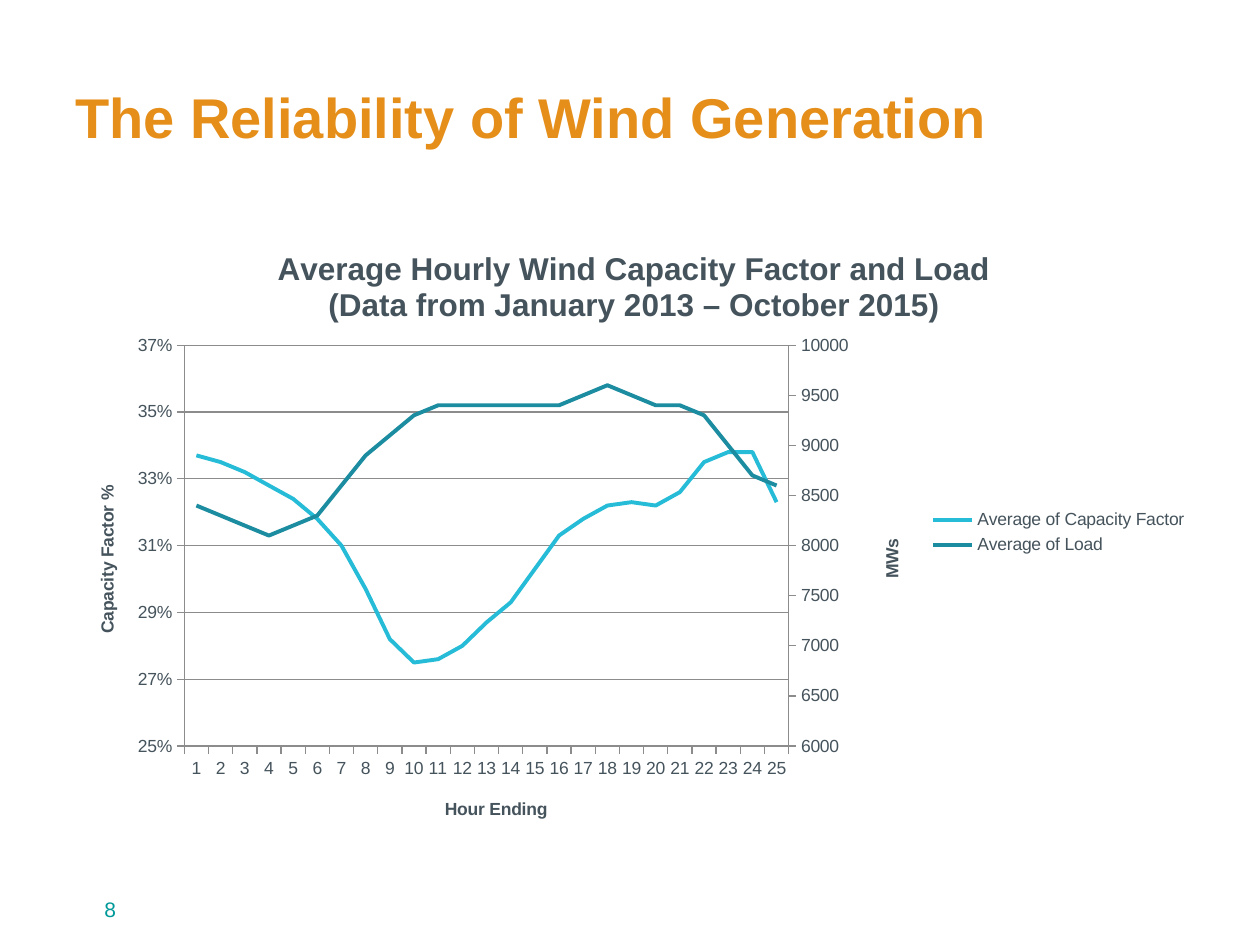
from copy import deepcopy

from lxml import etree
from pptx import Presentation
from pptx import util as u
from pptx.chart.axis import ValueAxis
from pptx.chart.data import CategoryChartData
from pptx.dml.color import RGBColor
from pptx.enum import chart as charts, text
from pptx.oxml.ns import qn

HEADING = "The Reliability of Wind Generation"
PAGE_NUMBER = "8"
CHART_TITLE = "Average Hourly Wind Capacity Factor and Load\n(Data from January 2013 – October 2015)"
HOURS = [str(hour) for hour in range(1, 26)]
CAPACITY = [0.337, 0.335, 0.332, 0.328, 0.324, 0.318, 0.31, 0.297, 0.282, 0.275, 0.276, 0.28, 0.287,
            0.293, 0.303, 0.313, 0.318, 0.322, 0.323, 0.322, 0.326, 0.335, 0.338, 0.338, 0.323]
LOAD = [8400, 8300, 8200, 8100, 8200, 8300, 8600, 8900, 9100, 9300, 9400, 9400, 9400,
        9400, 9400, 9400, 9500, 9600, 9500, 9400, 9400, 9300, 9000, 8700, 8600]
SERIES = [("Average of Capacity Factor", CAPACITY, "26BCD7"), ("Average of Load", LOAD, "1C8CA1")]
THEME = {
    "font": "Arial", "heading": "E58E1A", "number": "009999", "ink": "45535C", "rule": "8C8C8C",
    "heading_size": 32, "number_size": 12, "title_size": 18, "label_size": 10,
}
LAYOUTS = {
    "plot": {"x": 0.107, "y": 0.2, "w": 0.533, "h": 0.643},
    "title": {"x": 0.186, "y": 0.04},
    "hours": {"x": 0.334, "y": 0.92},
    "capacity": {"x": 0.026, "y": 0.42},
    "load": {"x": 0.718, "y": 0.505},
    "legend": {"x": 0.76, "y": 0.455, "w": 0.236, "h": 0.09},
}


def style_font(font, size, color, bold=False):
    for name, value in {"name": THEME["font"], "size": u.Pt(size), "bold": bold}.items():
        setattr(font, name, value)
    font.color.rgb = RGBColor.from_string(color)


def add_label(page, frame, words, size, color, bold, anchor):
    box = page.shapes.add_textbox(*map(u.Pt, frame))
    box.text_frame.word_wrap = True
    box.text_frame.vertical_anchor = anchor
    span = box.text_frame.paragraphs[0].add_run()
    span.text = words
    style_font(span.font, size, color, bold)


def place(parent, after, layout, inner=False):
    for old in parent.findall(qn("c:layout")):
        parent.remove(old)
    holder = etree.Element(qn("c:layout"))
    manual = etree.SubElement(holder, qn("c:manualLayout"))
    values = {"layoutTarget": "inner"} if inner else {}
    values |= {"xMode": "edge", "yMode": "edge"} | layout
    for name, value in values.items():
        etree.SubElement(manual, qn("c:" + name)).set("val", str(value))
    if after is None:
        parent.insert(0, holder)
    else:
        after.addnext(holder)


def write_title(title, words, size):
    title.text_frame.text = words
    for para in title.text_frame.paragraphs:
        for span in para.runs:
            style_font(span.font, size, THEME["ink"], True)


def style_line(line, color, width):
    line.color.rgb = RGBColor.from_string(color)
    line.width = u.Pt(width)


def style_axis(axis, title):
    axis.major_tick_mark = charts.XL_TICK_MARK.OUTSIDE
    axis.minor_tick_mark = charts.XL_TICK_MARK.NONE
    style_line(axis.format.line, THEME["rule"], 0.75)
    style_font(axis.tick_labels.font, THEME["label_size"], THEME["ink"])
    write_title(axis.axis_title, title, THEME["label_size"])


def scale_axis(axis, low, high, step, number_format):
    axis.minimum_scale, axis.maximum_scale, axis.major_unit = low, high, step
    axis.tick_labels.number_format = number_format
    axis.tick_labels.number_format_is_linked = False


def add_load_axis(chart):
    plot_area = chart.element.xpath(".//c:plotArea")[0]
    first = plot_area.find(qn("c:lineChart"))
    second = deepcopy(first)
    first.remove(first.findall(qn("c:ser"))[1])
    second.remove(second.find(qn("c:ser")))
    first.addnext(second)
    hours = plot_area.find(qn("c:catAx"))
    capacity = plot_area.find(qn("c:valAx"))
    hidden, load = deepcopy(hours), deepcopy(capacity)
    capacity.addnext(load)
    load.addnext(hidden)
    for axis, own, other in ((hidden, "5001", "5002"), (load, "5002", "5001")):
        axis.find(qn("c:axId")).set("val", own)
        axis.find(qn("c:crossAx")).set("val", other)
    for link, number in zip(second.findall(qn("c:axId")), ("5001", "5002")):
        link.set("val", number)
    load.find(qn("c:axPos")).set("val", "r")
    load.find(qn("c:crosses")).set("val", "max")
    axis = ValueAxis(load)
    axis.has_major_gridlines = False
    hidden_axis = hidden.find(qn("c:delete"))
    hidden_axis.set("val", "1")
    return axis


def add_line_chart(page):
    data = CategoryChartData()
    data.categories = HOURS
    for name, values, _ in SERIES:
        data.add_series(name, values)
    frame = map(u.Pt, (36, 126, 648, 356.4))
    chart = page.shapes.add_chart(charts.XL_CHART_TYPE.LINE, *frame, data).chart
    style_font(chart.font, THEME["label_size"], THEME["ink"])
    chart.has_title = True
    write_title(chart.chart_title, CHART_TITLE, THEME["title_size"])
    chart.chart_title.include_in_layout = False
    chart.has_legend = True
    chart.legend.position = charts.XL_LEGEND_POSITION.RIGHT
    chart.legend.include_in_layout = False
    style_font(chart.legend.font, THEME["label_size"], THEME["ink"])
    for series, (_, _, color) in zip(chart.plots[0].series, SERIES):
        series.smooth = False
        style_line(series.format.line, color, 2.25)
    chart.plots[0].vary_by_categories = False

    capacity = chart.value_axis
    capacity.has_major_gridlines = True
    style_line(capacity.major_gridlines.format.line, THEME["rule"], 0.75)
    load = add_load_axis(chart)
    scale_axis(capacity, 0.25, 0.37, 0.02, "0%")
    scale_axis(load, 6000, 10000, 500, "0")
    for axis, title in ((chart.category_axis, "Hour Ending"), (capacity, "Capacity Factor %"), (load, "MWs")):
        style_axis(axis, title)

    root = chart.element
    titles = {"title": "c:chart", "hours": "c:catAx[1]", "capacity": "c:valAx[1]", "load": "c:valAx[2]"}
    for name, owner in titles.items():
        title = root.xpath(f".//{owner}/c:title")[0]
        place(title, title.find(qn("c:tx")), LAYOUTS[name])
    legend = root.xpath(".//c:legend")[0]
    place(legend, legend.find(qn("c:legendPos")), LAYOUTS["legend"])
    place(root.xpath(".//c:plotArea")[0], None, LAYOUTS["plot"], inner=True)


def main():
    deck = Presentation()
    deck.slide_width, deck.slide_height = u.Pt(720), u.Pt(540)
    page = deck.slides.add_slide(deck.slide_layouts[6])
    add_label(page, (52.5, 509, 168, 29), PAGE_NUMBER, THEME["number_size"], THEME["number"],
              False, text.MSO_ANCHOR.TOP)
    add_label(page, (36, 21.6, 648, 90), HEADING, THEME["heading_size"], THEME["heading"],
              True, text.MSO_ANCHOR.MIDDLE)
    add_line_chart(page)
    deck.save("out.pptx")


if __name__ == "__main__":
    main()
